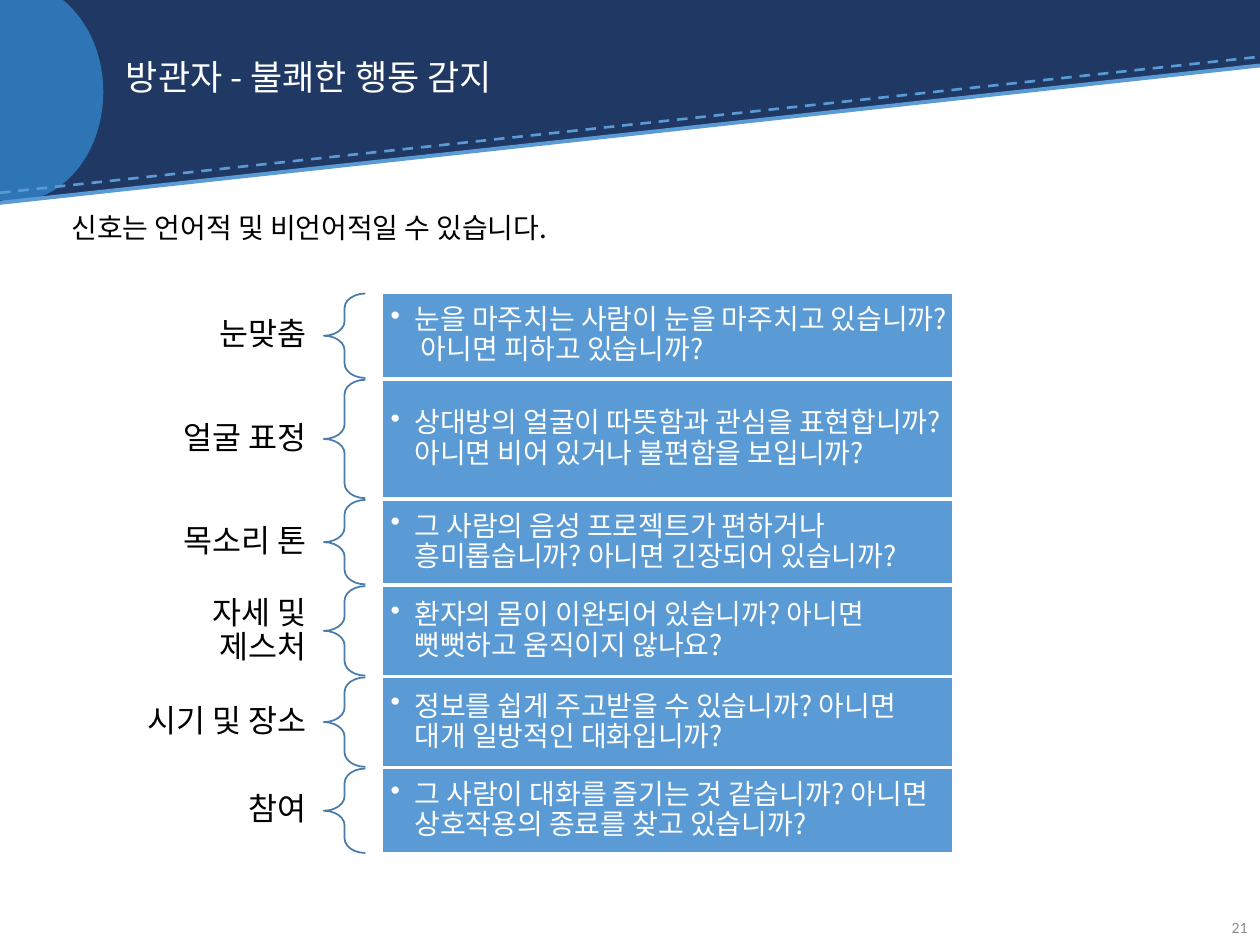
from lxml.etree import SubElement
from pptx import Presentation
from pptx.dml.color import RGBColor
from pptx.enum.dml import MSO_LINE
from pptx.enum.shapes import MSO_CONNECTOR, MSO_SHAPE
from pptx.enum.text import MSO_ANCHOR, PP_ALIGN
from pptx.oxml.ns import qn
from pptx.util import Inches, Pt

COLORS = {"navy": "203864", "disc": "2E75B6", "blue": "5B9BD5",
          "brace": "497CAB", "white": "FFFFFF", "black": "000000",
          "gray": "8C8C8C"}
KOREAN = "Noto Sans CJK KR"

# Label, label height, row height, question
ROWS = [
    ("눈맞춤", 0.4, 0.67,
     "눈을 마주치는 사람이 눈을 마주치고 있습니까? 아니면 피하고 있습니까?"),
    ("얼굴 표정", 0.4, 0.94,
     "상대방의 얼굴이 따뜻함과 관심을 표현합니까? 아니면 비어 있거나 불편함을 보입니까?"),
    ("목소리 톤", 0.4, 0.67,
     "그 사람의 음성 프로젝트가 편하거나 흥미롭습니까? 아니면 긴장되어 있습니까?"),
    ("자세 및 제스처", 0.71, 0.71,
     "환자의 몸이 이완되어 있습니까? 아니면 뻣뻣하고 움직이지 않나요?"),
    ("시기 및 장소", 0.71, 0.71,
     "정보를 쉽게 주고받을 수 있습니까? 아니면 대개 일방적인 대화입니까?"),
    ("참여", 0.4, 0.67,
     "그 사람이 대화를 즐기는 것 같습니까? 아니면 상호작용의 종료를 찾고 있습니까?"),
]
TOP, BOTTOM = 2.33, 6.77


def color(name):
    return RGBColor.from_string(COLORS[name])


def add_shape(slide, kind, box, fill=None, line=None):
    shape = slide.shapes.add_shape(kind, *map(Inches, box))
    shape.shadow.inherit = False
    if fill:
        shape.fill.solid()
        shape.fill.fore_color.rgb = color(fill)
    else:
        shape.fill.background()
    if line:
        shape.line.color.rgb = color(line)
        shape.line.width = Pt(1)
    else:
        shape.line.fill.background()
    return shape


def add_line(slide, ends, width, dash=None):
    line = slide.shapes.add_connector(MSO_CONNECTOR.STRAIGHT,
                                      *map(Inches, ends))
    line.line.color.rgb = color("blue")
    line.line.width = Pt(width)
    line.line.dash_style = dash
    SubElement(line._element.spPr, qn("a:effectLst"))


def set_text(shape, text, size, ink, font=KOREAN, align=PP_ALIGN.LEFT,
             anchor=MSO_ANCHOR.MIDDLE, inset=(0.1, 0.05), bullet=False):
    frame = shape.text_frame
    across, down = map(Inches, inset)
    layout = {"word_wrap": True, "vertical_anchor": anchor,
              "margin_left": across, "margin_right": across,
              "margin_top": down, "margin_bottom": down}
    for key, value in layout.items():
        setattr(frame, key, value)
    para = frame.paragraphs[0]
    para.alignment = align
    para.line_spacing = 0.9
    if bullet:
        props = para._p.get_or_add_pPr()
        props.set("marL", str(Inches(0.19)))
        props.set("indent", str(-Inches(0.19)))
        SubElement(props, qn("a:buChar")).set("char", "•")
    run = para.add_run()
    run.text = text
    for key, value in {"size": Pt(size), "name": font}.items():
        setattr(run.font, key, value)
    run.font.color.rgb = color(ink)
    SubElement(run._r.get_or_add_rPr(), qn("a:ea")).set("typeface", font)


def add_text(slide, box, *args, **style):
    set_text(slide.shapes.add_textbox(*map(Inches, box)), *args, **style)


def add_banner(slide):
    add_shape(slide, MSO_SHAPE.RECTANGLE, (0, 0, 10, 0.52), "navy")
    wedge = add_shape(slide, MSO_SHAPE.RIGHT_TRIANGLE,
                      (0, 0.51, 10, 1.09), "navy")
    wedge._element.spPr.xfrm.set("flipV", "1")
    add_shape(slide, MSO_SHAPE.OVAL, (-0.59, -0.14, 1.41, 1.74), "disc")
    add_line(slide, (0, 1.53, 10, 0.45), 1.5, MSO_LINE.DASH)
    add_line(slide, (0, 1.61, 10, 0.52), 2.25)


def add_row(slide, top, label, tall, height, question):
    add_text(slide, (0.9, top + (height - tall) / 2, 1.67, tall), label, 18,
             "black", align=PP_ALIGN.RIGHT, inset=(0.14, 0.05))
    brace = add_shape(slide, MSO_SHAPE.LEFT_BRACE,
                      (2.57, top, 0.33, height), line="brace")
    brace.adjustments[0] = 0.35
    bar = add_shape(slide, MSO_SHAPE.RECTANGLE, (3.03, top, 4.53, height),
                    "blue", "white")
    set_text(bar, question, 16, "white", inset=(0.07, 0.07), bullet=True)


def main():
    deck = Presentation()
    deck.slide_width, deck.slide_height = Inches(10), Inches(7.5)
    slide = deck.slides.add_slide(deck.slide_layouts[6])

    # Banner, title and lead sentence
    add_banner(slide)
    add_text(slide, (0.9, 0.2, 8.05, 0.86), "방관자 - 불쾌한 행동 감지",
             20, "white")
    add_text(slide, (0.47, 1.65, 8.83, 0.4),
             "신호는 언어적 및 비언어적일 수 있습니다.", 16, "black",
             anchor=MSO_ANCHOR.TOP)

    # Rows of signals, with equal gaps
    gap = (BOTTOM - TOP - sum(row[2] for row in ROWS)) / (len(ROWS) - 1)
    top = TOP
    for row in ROWS:
        add_row(slide, top, *row)
        top += row[2] + gap

    # Page number
    add_text(slide, (9.47, 7.17, 0.53, 0.4), "21", 9, "gray",
             font="Calibri", align=PP_ALIGN.RIGHT)
    deck.save("out.pptx")


if __name__ == "__main__":
    main()
